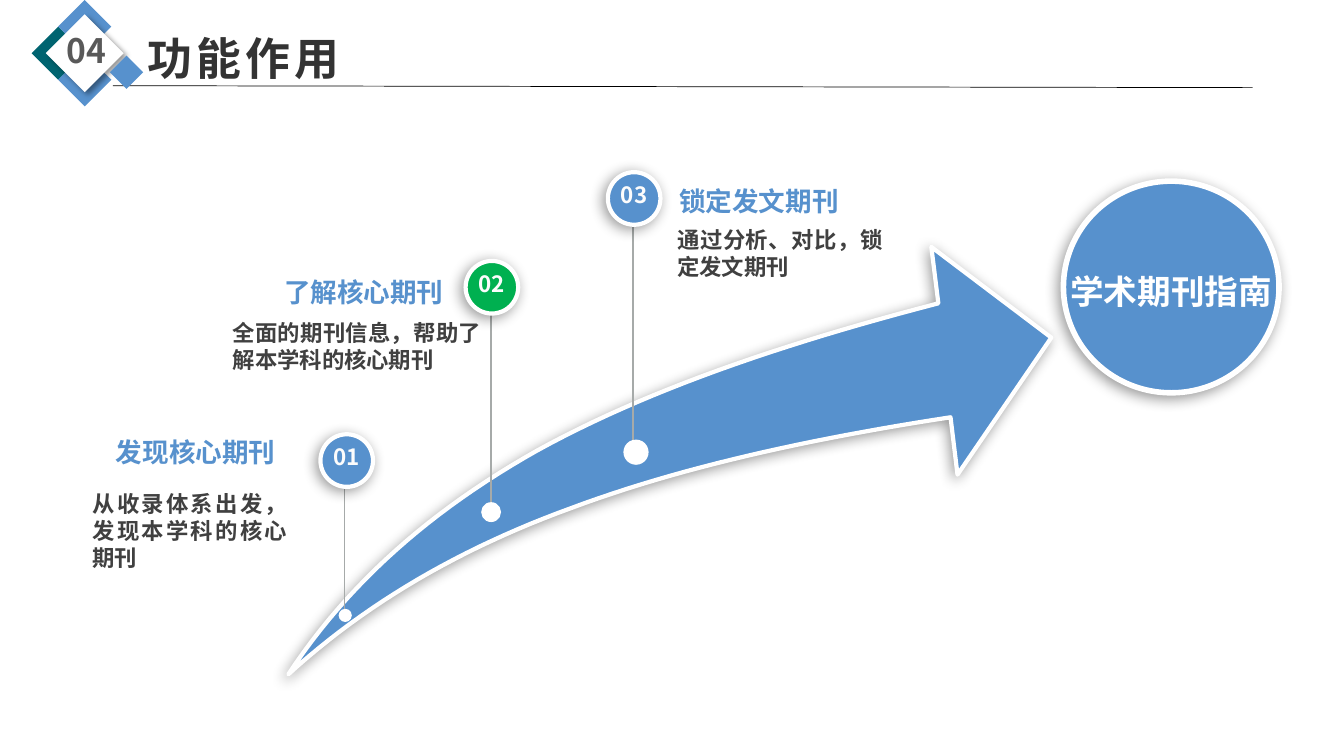
from lxml import etree
from pptx import Presentation
from pptx.dml.color import RGBColor
from pptx.enum.shapes import MSO_CONNECTOR, MSO_SHAPE
from pptx.enum.text import MSO_ANCHOR, MSO_AUTO_SIZE, PP_ALIGN
from pptx.oxml.ns import qn
from pptx.util import Pt

OVAL, DIAMOND = MSO_SHAPE.OVAL, MSO_SHAPE.DIAMOND
STRAIGHT = MSO_CONNECTOR.STRAIGHT
TOP, MIDDLE = MSO_ANCHOR.TOP, MSO_ANCHOR.MIDDLE
LEFT, CENTER, RIGHT, JUSTIFY = PP_ALIGN.LEFT, PP_ALIGN.CENTER, PP_ALIGN.RIGHT, PP_ALIGN.JUSTIFY
NO_AUTOSIZE = MSO_AUTO_SIZE.NONE

FONT = "Noto Sans CJK SC"
BLUE, GREEN, TEAL, WHITE = "5791CD", "00B050", "006470", "FFFFFF"
BODY_COLOR, STEM_COLOR = "404040", "A6AAA9"

ARROW_START = (206, 481.7)
ARROW_UPPER = [
    [(249.1, 416.2), (308.2, 364.3), (383.8, 321.8)],
    [(460.8, 279.4), (556.6, 246.2), (670.3, 216.7)],
]
ARROW_HEAD = [(665.3, 176.4), (751, 241.2), (684, 339.1), (679, 298.1)]
ARROW_LOWER = [
    [(576, 313.9), (485.3, 334.1), (408.2, 362.9)],
    [(329, 391.7), (262.1, 430.6), ARROW_START],
]

STEPS = [
    dict(number="01", color=BLUE, badge=(247.7, 329), dot=(246.6, 439.6), dot_size=9.4, stem=246.2,
         heading="发现核心期刊", heading_box=(46, 308, 150.6, 32), align=RIGHT,
         body="从收录体系出发，发现本学科的核心期刊", body_box=(66.2, 350, 139, 72)),
    dict(number="02", color=GREEN, badge=(351.4, 205.2), dot=(350.8, 365.8), dot_size=14.2, stem=350.6,
         heading="了解核心期刊", heading_box=(139.7, 193.7, 177.1, 32.4), align=RIGHT,
         body="全面的期刊信息，帮助了解本学科的核心期刊", body_box=(166.3, 228, 177.5, 49)),
    dict(number="03", color=BLUE, badge=(453, 141.8), dot=(454.3, 323), dot_size=18, stem=452.2,
         heading="锁定发文期刊", heading_box=(485.3, 128.9, 146.2, 32.4), align=LEFT,
         body="通过分析、对比，锁定发文期刊", body_box=(483.8, 161.5, 147, 49)),
]


def rgb(color):
    return RGBColor.from_string(color)


def add_shadow(shape, blur, distance, direction):
    effects = shape._element.spPr.find(qn("a:effectLst"))
    shadow = etree.SubElement(effects, qn("a:outerShdw"), blurRad=str(Pt(blur)),
                              dist=str(Pt(distance)), dir=str(direction * 60000),
                              algn="ctr", rotWithShape="0")
    color = etree.SubElement(shadow, qn("a:srgbClr"), val="000000")
    etree.SubElement(color, qn("a:alpha"), val="40000")


def paint(shape, fill, outline=0):
    shape.shadow.inherit = False
    shape.fill.solid()
    shape.fill.fore_color.rgb = rgb(fill)
    if outline:
        shape.line.color.rgb = rgb(WHITE)
        shape.line.width = Pt(outline)
        add_shadow(shape, 10, 3, 135)
    else:
        shape.line.fill.background()


def write(shape, text, size, color, align=LEFT, anchor=TOP, spacing=1.0, wrap=True, letter_spacing=0):
    frame = shape.text_frame
    frame.text = text
    frame.auto_size = NO_AUTOSIZE
    frame.word_wrap = wrap
    frame.vertical_anchor = anchor
    frame.margin_left = frame.margin_right = frame.margin_top = frame.margin_bottom = 0
    paragraph = frame.paragraphs[0]
    paragraph.alignment = align
    paragraph.line_spacing = spacing
    paragraph.space_before = Pt(0)
    font = paragraph.runs[0].font
    font.name, font.size, font.bold = FONT, Pt(size), True
    font.color.rgb = rgb(color)
    properties = font._rPr
    etree.SubElement(properties, qn("a:ea"), typeface=FONT)
    if letter_spacing:
        properties.set("spc", str(letter_spacing * 100))


def add_text(slide, box, text, size, color, **options):
    write(slide.shapes.add_textbox(*map(Pt, box)), text, size, color, **options)


def add_centered(slide, kind, center, width, fill, height=None, outline=0):
    height = height or width
    shape = slide.shapes.add_shape(kind, Pt(center[0] - width / 2), Pt(center[1] - height / 2),
                                   Pt(width), Pt(height))
    paint(shape, fill, outline)
    return shape


def add_line(slide, start, end, color, width):
    line = slide.shapes.add_connector(STRAIGHT, *map(Pt, start + end))
    line.line.color.rgb = rgb(color)
    line.line.width = Pt(width)
    etree.SubElement(line._element.spPr, qn("a:effectLst"))


def curve_points(start, curves, steps=24):
    points = []
    for first, second, end in curves:
        for step in range(1, steps + 1):
            t = step / steps
            weights = ((1 - t) ** 3, 3 * t * (1 - t) ** 2, 3 * t * t * (1 - t), t ** 3)
            corners = (start, first, second, end)
            points.append(tuple(sum(w * c[axis] for w, c in zip(weights, corners)) for axis in (0, 1)))
        start = end
    return points


def add_arrow(slide):
    points = curve_points(ARROW_START, ARROW_UPPER) + ARROW_HEAD
    points += curve_points(ARROW_HEAD[-1], ARROW_LOWER)[:-1]
    builder = slide.shapes.build_freeform(*map(Pt, ARROW_START))
    builder.add_line_segments([(Pt(x), Pt(y)) for x, y in points], close=True)
    paint(builder.convert_to_shape(), BLUE, 3)


def add_step(slide, step):
    add_line(slide, (step["stem"], step["dot"][1]), (step["stem"], step["badge"][1]), STEM_COLOR, 1)
    badge = add_centered(slide, OVAL, step["badge"], 37.6, step["color"], outline=3)
    write(badge, step["number"], 16, "FCFCFC", align=CENTER, anchor=MIDDLE, spacing=Pt(14), wrap=False)
    add_centered(slide, OVAL, step["dot"], step["dot_size"], WHITE)
    add_text(slide, step["heading_box"], step["heading"], 19, BLUE,
             align=step["align"], anchor=MIDDLE, spacing=0.9)
    add_text(slide, step["body_box"], step["body"], 16, BODY_COLOR, align=JUSTIFY)


def add_goal(slide):
    goal = add_centered(slide, OVAL, (836.6, 205), 154, BLUE, height=151.2, outline=4)
    write(goal, "学术期刊指南", 24, WHITE, align=CENTER, anchor=MIDDLE, spacing=0.9, wrap=False)
    goal.text_frame.margin_top = Pt(9)


def add_title(slide):
    title = slide.shapes.title
    title.left, title.top, title.width, title.height = map(Pt, (105.1, 21.6, 358.6, 46))
    write(title, "功能作用", 32, "333333", letter_spacing=3)


def add_section_mark(slide):
    add_line(slide, (80.6, 61.2), (894.8, 62.6), "000000", 0.5)
    for center, color in (((41.6, 38), TEAL), ((60.5, 19), BLUE), ((60.5, 57), BLUE)):
        add_centered(slide, DIAMOND, center, 38, color)
    panel = add_centered(slide, DIAMOND, (60.5, 38), 55.6, WHITE)
    add_shadow(panel, 4, 3, 45)
    add_centered(slide, DIAMOND, (90.4, 51.6), 23.8, BLUE)
    add_text(slide, (35, 21.2, 53.3, 34), "04", 24, "595959", align=CENTER)


def main():
    presentation = Presentation()
    presentation.slide_width, presentation.slide_height = Pt(960), Pt(540)
    slide = presentation.slides.add_slide(presentation.slide_layouts[5])
    add_title(slide)
    add_arrow(slide)
    for step in STEPS:
        add_step(slide, step)
    add_goal(slide)
    add_section_mark(slide)
    presentation.save("out.pptx")


if __name__ == "__main__":
    main()
